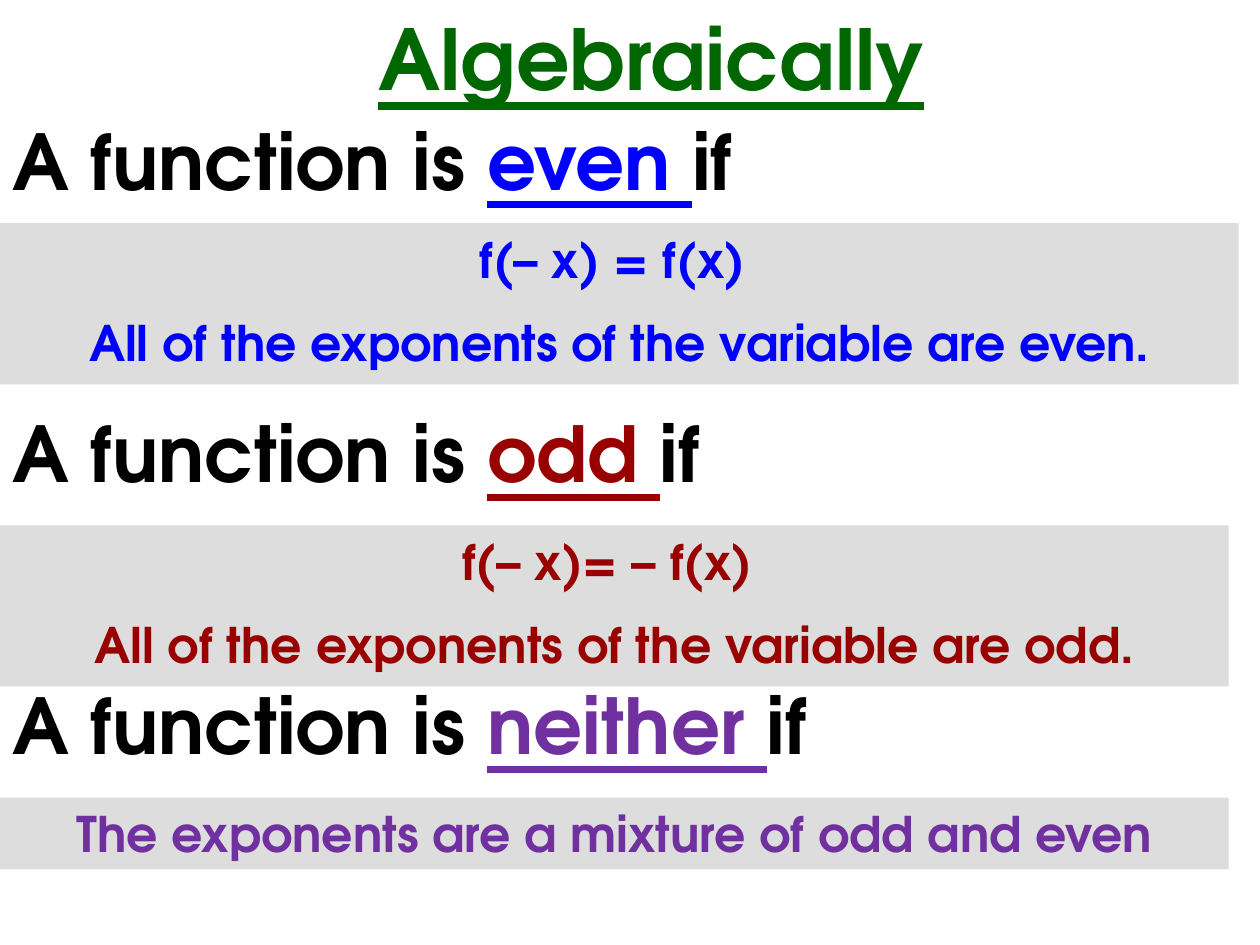
import pptx
import pptx.dml.color
import pptx.enum.shapes
import pptx.enum.text
import pptx.util

Cm = pptx.util.Cm
Pt = pptx.util.Pt
CENTER = pptx.enum.text.PP_ALIGN.CENTER


def color(hex_string):
    return pptx.dml.color.RGBColor.from_string(hex_string)


def write_lines(shape, lines, size, alignment=None):
    """Fill a shape with paragraphs, each a list of (text, colour, underlined)."""
    frame = shape.text_frame
    frame.word_wrap = True
    frame.auto_size = pptx.enum.text.MSO_AUTO_SIZE.SHAPE_TO_FIT_TEXT
    frame.vertical_anchor = pptx.enum.text.MSO_ANCHOR.TOP
    for index, line in enumerate(lines):
        paragraph = frame.add_paragraph() if index else frame.paragraphs[0]
        paragraph.alignment = alignment
        paragraph.space_before = Pt(size / 2 if index else 0)
        paragraph.font.name = "TeX Gyre Adventor"
        paragraph.font.size = Pt(size)
        paragraph.font.bold = True
        for text, text_color, underlined in line:
            run = paragraph.add_run()
            run.text = text
            run.font.color.rgb = color(text_color)
            run.font.underline = underlined


presentation = pptx.Presentation()
presentation.slide_width = Cm(25.4)
presentation.slide_height = Cm(19.05)
slide = presentation.slides.add_slide(presentation.slide_layouts[6])

title = slide.shapes.add_textbox(Cm(4.24), Cm(0), Cm(17.78), Cm(2.29))
write_lines(title, [[("Algebraically", "006600", True)]], 48, CENTER)

# keyword, colour, heading top, panel top, panel width, panel height, panel lines
definitions = [
    ("even", "0000FF", 2.16, 4.5, 24.97, 3.25,
     ["f(– x) = f(x) ", "All of the exponents of the variable are even."]),
    ("odd", "990000", 8.05, 10.59, 24.77, 3.25,
     ["f(– x)= – f(x) ", "All of the exponents of the variable are odd."]),
    ("neither", "7030A0", 13.54, 16.08, 24.77, 1.45,
     ["The exponents are a mixture of odd and even"]),
]
for keyword, accent, heading_top, panel_top, width, height, lines in definitions:
    heading = slide.shapes.add_textbox(Cm(0), Cm(heading_top), Cm(23.93), Cm(2.11))
    write_lines(heading, [[("A function is ", "000000", False),
                           (keyword + " ", accent, True),
                           ("if", "000000", False)]], 44)

    panel = slide.shapes.add_shape(
        pptx.enum.shapes.MSO_SHAPE.RECTANGLE, Cm(0), Cm(panel_top), Cm(width), Cm(height))
    panel.shadow.inherit = False
    panel.fill.solid()
    panel.fill.fore_color.rgb = color("DDDDDD")
    panel.line.fill.background()
    write_lines(panel, [[(line, accent, False)] for line in lines], 28, CENTER)

presentation.save("out.pptx")
